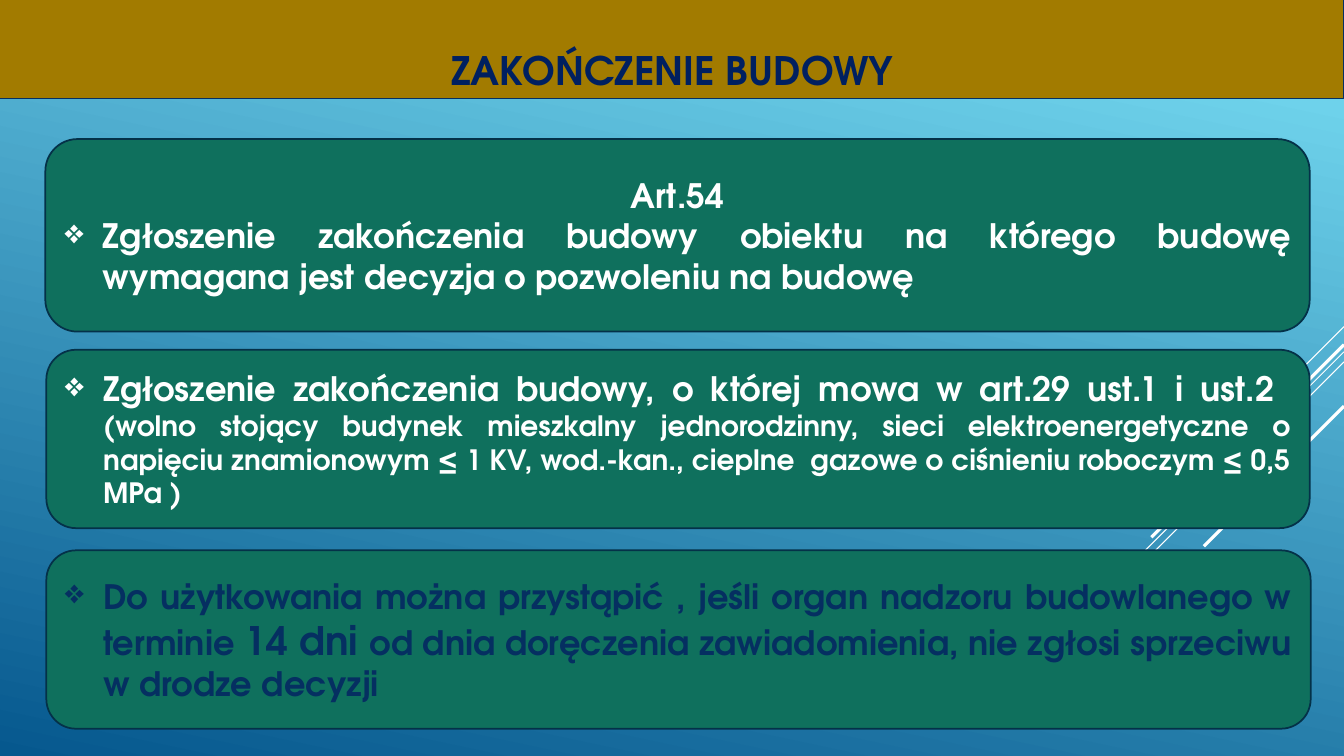
from lxml import etree
from pptx import Presentation
from pptx.dml.color import RGBColor
from pptx.enum import shapes, text
from pptx.oxml.ns import qn
from pptx.util import Inches, Pt

FONT = "TeX Gyre Adventor"
WIDE, HIGH = 13.33, 7.5
WHITE, NAVY, GREEN = "FFFFFF", "052F61", "0F705D"


def color(code):
    return RGBColor.from_string(code)


def write(par, words, size=24, ink=WHITE):
    run = par.add_run()
    run.text = words
    run.font.name = FONT
    run.font.size = Pt(size)
    run.font.bold = True
    run.font.color.rgb = color(ink)


def bullet(par, ink):
    par.alignment = text.PP_ALIGN.JUSTIFY
    props = par._p.get_or_add_pPr()
    props.set("marL", str(Inches(0.38)))
    props.set("indent", str(-Inches(0.38)))
    tint = etree.SubElement(props, qn("a:buClr"))
    etree.SubElement(tint, qn("a:srgbClr"), val=ink)
    etree.SubElement(props, qn("a:buChar"), char="❖")


def panel(slide, kind, box, fill, edge, width):
    shape = slide.shapes.add_shape(kind, *map(Inches, box))
    shape.shadow.inherit = False
    shape.fill.solid()
    shape.fill.fore_color.rgb = color(fill)
    shape.line.color.rgb = color(edge)
    shape.line.width = Pt(width)
    shape.text_frame.word_wrap = True
    return shape.text_frame


def backdrop(slide):
    fill = slide.background.fill
    fill.gradient()
    fill.gradient_angle = 360 - 102
    stops = ((0.1, "6ED2EB"), (1, "06588E"))
    for stop, (place, code) in zip(fill.gradient_stops, stops):
        stop.position = place
        stop.color.rgb = color(code)


def streaks(slide, right):
    # Diagonal lines running down and left from the right edge
    rows = ((3.24, 1, 0.75), (3.49, 3.26, 0.75), (3.59, 2.07, 0.75),
            (3.42, 1.91, 2.25), (4.03, 1.39, 2.25))
    for top, reach, width in rows:
        ends = (right, top, right - reach, top + reach)
        line = slide.shapes.add_connector(
            shapes.MSO_CONNECTOR.STRAIGHT, *map(Inches, ends))
        line.line.color.rgb = color(WHITE)
        line.line.width = Pt(width)
        etree.SubElement(line._element.spPr, qn("a:effectLst"))


def banner(slide, box, words):
    frame = panel(slide, shapes.MSO_SHAPE.RECTANGLE, box, "A27B00", NAVY, 0.75)
    frame.vertical_anchor = text.MSO_ANCHOR.BOTTOM
    par = frame.paragraphs[0]
    par.alignment = text.PP_ALIGN.CENTER
    write(par, words, size=28, ink="002060")


def card(slide, box, parts, ink=WHITE, head=None):
    frame = panel(slide, shapes.MSO_SHAPE.ROUNDED_RECTANGLE, box,
                  GREEN, "043148", 1.25)
    frame.vertical_anchor = text.MSO_ANCHOR.MIDDLE
    par = frame.paragraphs[0]
    if head:
        par.alignment = text.PP_ALIGN.CENTER
        write(par, head, ink=ink)
        par = frame.add_paragraph()
    bullet(par, ink)
    for words, size in parts:
        write(par, words, size=size, ink=ink)


def main():
    deck = Presentation()
    deck.slide_width, deck.slide_height = Inches(WIDE), Inches(HIGH)
    slide = deck.slides.add_slide(deck.slide_layouts[6])
    backdrop(slide)
    streaks(slide, WIDE)
    banner(slide, (0, -0.05, WIDE, 1.03), "ZAKOŃCZENIE BUDOWY")

    # Three rule cards, top to bottom
    card(slide, (0.45, 1.38, 12.54, 1.91), [
        ("Zgłoszenie zakończenia budowy obiektu na którego budowę "
         "wymagana jest decyzja o pozwoleniu na budowę", 24)], head="Art.54")
    card(slide, (0.46, 3.47, 12.53, 1.77), [
        ("Zgłoszenie zakończenia budowy, o której mowa w art.29 ust.1 i "
         "ust.2 ", 24),
        (" ", 18),
        ("(wolno stojący budynek mieszkalny jednorodzinny, sieci "
         "elektroenergetyczne o napięciu znamionowym ≤ 1 KV, wod.-kan., "
         "cieplne  gazowe o ciśnieniu roboczym ≤ 0,5 MPa )", 20)])
    card(slide, (0.46, 5.46, 12.54, 1.77), [
        ("Do użytkowania można przystąpić , jeśli organ nadzoru "
         "budowlanego w terminie ", 24),
        ("14 dni ", 28),
        ("od dnia doręczenia zawiadomienia, nie zgłosi sprzeciwu w drodze "
         "decyzji", 24)], ink=NAVY)
    deck.save("out.pptx")


if __name__ == "__main__":
    main()
